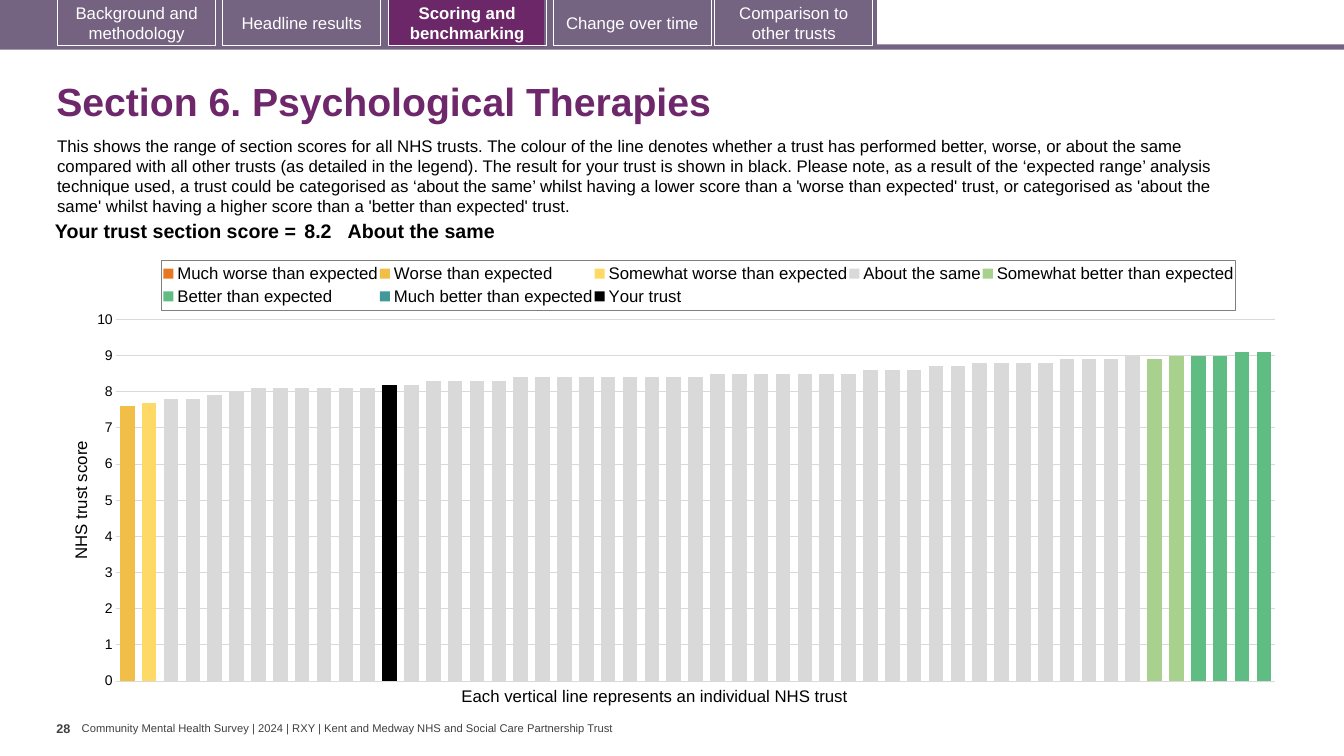
from copy import deepcopy
from lxml.etree import SubElement
from pptx import Presentation
from pptx.chart.data import CategoryChartData
from pptx.dml.color import RGBColor
from pptx.enum.chart import XL_CHART_TYPE as CT, XL_LEGEND_POSITION as LP, XL_TICK_MARK as TM
from pptx.enum.shapes import MSO_SHAPE as SHAPE
from pptx.enum.text import MSO_ANCHOR as ANCHOR, PP_ALIGN as AL
from pptx.oxml import parse_xml
from pptx.oxml.ns import nsdecls, qn
from pptx.util import Cm, Pt

COLORS = {"black": "000000", "white": "FFFFFF", "grey": "404040", "band": "756382",
          "tab": "746280", "active": "6B2768", "title": "6D276A", "grid": "D9D9D9",
          "border": "7F7F7F"}
TABS = [("Background and methodology", 1.45, "tab"), ("Headline results", 5.61, None),
        ("Scoring and benchmarking", 9.78, None), ("Change over time", 13.94, "band"),
        ("Comparison to other trusts", 18.01, "band")]
TRUSTS = 53
SAME_RUNS = [(7.8, 2), (7.9, 1), (8, 1), (8.1, 6), (8.2, 2), (8.3, 4), (8.4, 9),
             (8.5, 7), (8.6, 3), (8.7, 2), (8.8, 4), (8.9, 3), (9, 1)]
SAME = [score for score, count in SAME_RUNS for _ in range(count)]
SERIES = [("Much worse than expected", "E87722", 0, []),
          ("Worse than expected", "F1BE48", 0, [7.6]),
          ("Somewhat worse than expected", "FFD966", 1, [7.7]),
          ("About the same", "D9D9D9", 2, SAME),
          ("Somewhat better than expected", "A9D18E", 47, [8.9, 9]),
          ("Better than expected", "5FBD83", 49, [9, 9, 9.1, 9.1]),
          ("Much better than expected", "419999", 0, []),
          ("Your trust", "000000", 12, [8.2])]
SCORE_CELLS = [("Your trust section score =", 6.68, AL.RIGHT, 0.1),
               ("8.2", 1.19, AL.LEFT, 0.1), ("About the same", 21.82, AL.LEFT, 0)]
INTRO = ("This shows the range of section scores for all NHS trusts. The colour of the line "
         "denotes whether a trust has performed better, worse, or about the same compared with "
         "all other trusts (as detailed in the legend). The result for your trust is shown in "
         "black. Please note, as a result of the ‘expected range’ analysis technique used, a "
         "trust could be categorised as ‘about the same’ whilst having a lower score than a "
         "'worse than expected' trust, or categorised as 'about the same' whilst having a higher "
         "score than a 'better than expected' trust.")


def rgb(name):
    return RGBColor.from_string(COLORS.get(name, name))


def manual_layout(x, y, w, h, inner=False):
    target = '<c:layoutTarget val="inner"/>' if inner else ""
    return parse_xml(
        f'<c:layout {nsdecls("c")}><c:manualLayout>{target}<c:xMode val="edge"/>'
        f'<c:yMode val="edge"/><c:x val="{x}"/><c:y val="{y}"/><c:w val="{w}"/>'
        f'<c:h val="{h}"/></c:manualLayout></c:layout>')


class SlideBuilder:
    """Draws styled elements on one slide, with lengths in centimetres."""

    def __init__(self, prs, font="Arial"):
        self.s = prs.slides.add_slide(prs.slide_layouts[6])
        self.font = font

    def style(self, font, size, color="black", bold=False):
        font.name, font.size, font.bold = self.font, Pt(size), bold
        font.color.rgb = rgb(color)

    def add_text(self, tf, text, size, color="black", bold=False, align=AL.LEFT):
        p = tf.paragraphs[0]
        p.alignment = align
        r = p.add_run()
        r.text = text
        self.style(r.font, size, color, bold)
        return p

    def text(self, box, text, size, color="black", bold=False, wrap=True,
             anchor=ANCHOR.TOP, inset=(0.25, 0.13)):
        tf = self.s.shapes.add_textbox(*map(Cm, box)).text_frame
        tf.word_wrap, tf.vertical_anchor = wrap, anchor
        tf.margin_left = tf.margin_right = Cm(inset[0])
        tf.margin_top = tf.margin_bottom = Cm(inset[1])
        return self.add_text(tf, text, size, color, bold)

    def rect(self, box, fill=None, line=None):
        sp = self.s.shapes.add_shape(SHAPE.RECTANGLE, *map(Cm, box))
        sp.shadow.inherit = False
        if fill:
            sp.fill.solid()
            sp.fill.fore_color.rgb = rgb(fill)
        else:
            sp.fill.background()
        if line:
            sp.line.color.rgb = rgb(line)
            sp.line.width = Pt(0.75)
        else:
            sp.line.fill.background()
        return sp

    def tab(self, label, left, fill, active):
        sp = self.rect((left, -0.03, 3.99, 1.19), fill, "white")
        sp.text_frame.word_wrap = True
        sp.text_frame.vertical_anchor = ANCHOR.MIDDLE
        self.add_text(sp.text_frame, label, 12, "white", active, AL.CENTER)

    def table(self, box, cells):
        table = self.s.shapes.add_table(1, len(cells), *map(Cm, box)).table
        table.first_row = table.horz_banding = False
        for i, (text, width, align, inset) in enumerate(cells):
            table.columns[i].width = Cm(width)
            cell = table.cell(0, i)
            cell.fill.background()
            cell.margin_left = cell.margin_right = Cm(inset)
            cell.margin_top = cell.margin_bottom = Cm(0.1)
            self.add_text(cell.text_frame, text, 14, bold=True, align=align)

    def chart(self, box, series):
        data = CategoryChartData()
        data.categories = [str(n + 1) for n in range(TRUSTS)]
        for name, _, start, scores in series:
            tail = TRUSTS - start - len(scores)
            data.add_series(name, [None] * start + scores + [None] * tail)
        chart = self.s.shapes.add_chart(CT.COLUMN_CLUSTERED, *map(Cm, box), data).chart
        chart.has_title = False
        chart.font.name, chart.font.size = "Calibri", Pt(10)
        chart.font.color.rgb = rgb("black")
        plot = chart.plots[0]
        plot.vary_by_categories = False
        plot.gap_width, plot.overlap = 50, 100
        for ser, (_, color, _, _) in zip(plot.series, series):
            ser.format.fill.solid()
            ser.format.fill.fore_color.rgb = rgb(color)
            ser.invert_if_negative = False
        chart.category_axis.visible = False
        axis = chart.value_axis
        axis.minimum_scale, axis.maximum_scale, axis.major_unit = 0, 10, 1
        axis.has_major_gridlines = False
        axis.major_tick_mark = TM.NONE
        axis.format.line.fill.background()
        self.right_axis(chart)
        axis.has_major_gridlines = True
        axis.major_gridlines.format.line.color.rgb = rgb("grid")
        axis.major_gridlines.format.line.width = Pt(0.75)
        self.style(axis.tick_labels.font, 10)
        self.add_text(axis.axis_title.text_frame, "NHS trust score", 12, align=AL.CENTER)
        self.legend(chart)

    def right_axis(self, chart):
        area = chart.value_axis._element.getparent()
        for old in area.findall(qn("c:layout")):
            area.remove(old)
        area.insert(0, manual_layout(0.04, 0.158, 0.946, 0.808, inner=True))
        left = area.find(qn("c:barChart"))
        right = deepcopy(left)
        left.remove(left.findall(qn("c:ser"))[-1])
        for ser in right.findall(qn("c:ser"))[:-1]:
            right.remove(ser)
        left.addnext(right)
        cat, val = (deepcopy(area.find(qn(tag))) for tag in ("c:catAx", "c:valAx"))
        area.find(qn("c:valAx")).addnext(val)
        val.addnext(cat)
        for node, ids in ((cat, (501, 502)), (val, (502, 501))):
            for tag, number in zip(("c:axId", "c:crossAx"), ids):
                node.find(qn(tag)).set("val", str(number))
        for node, number in zip(right.findall(qn("c:axId")), (501, 502)):
            node.set("val", str(number))
        for tag, value in (("c:axPos", "r"), ("c:crosses", "max"),
                           ("c:majorTickMark", "out"), ("c:tickLblPos", "none")):
            for node in val.findall(qn(tag)):
                node.set("val", value)

    def legend(self, chart):
        chart.has_legend = True
        legend = chart.legend
        legend.position, legend.include_in_layout = LP.TOP, False
        self.style(legend.font, 12)
        node = legend._element
        for old in node.findall(qn("c:layout")):
            node.remove(old)
        node.find(qn("c:legendPos")).addnext(manual_layout(0.077, 0.025, 0.877, 0.112))
        props = parse_xml(f'<c:spPr {nsdecls("c", "a")}/>')
        fill = SubElement(SubElement(props, qn("a:ln"), w=str(Pt(0.75))), qn("a:solidFill"))
        SubElement(fill, qn("a:srgbClr"), val=COLORS["border"])
        node.find(qn("c:txPr")).addprevious(props)


def main():
    prs = Presentation()
    prs.slide_width, prs.slide_height = Cm(33.87), Cm(19.05)
    b = SlideBuilder(prs)
    b.text((2.06, 18.19, 13.56, 0.33),
           "Community Mental Health Survey | 2024 | RXY | "
           "Kent and Medway NHS and Social Care Partnership Trust",
           8, "grey", wrap=False, anchor=ANCHOR.MIDDLE, inset=(0, 0))
    b.rect((0, 1.12, 33.87, 0.13), "band")
    b.rect((0, 0, 22.1, 1.19), "band")
    b.rect((9.8, 0, 3.91, 1.17), "active")
    for label, left, fill in TABS:
        b.tab(label, left, fill, label.startswith("Scoring"))
    title = b.text((1.17, 1.7, 31.72, 1.83), "Section 6. Psychological Therapies",
                   28, "title", True, anchor=ANCHOR.MIDDLE)
    title.line_spacing = 0.9
    b.text((1.42, 18.03, 0.64, 1.02), "28", 9, "grey", True, wrap=False, inset=(0, 0.13))
    b.text((1.19, 3.28, 30.81, 2.31), INTRO, 12)
    b.text((11.38, 17.15, 10.44, 0.76),
           "Each vertical line represents an individual NHS trust", 12, wrap=False)
    b.chart((1.7, 6.27, 30.86, 11.28), SERIES)
    b.table((0.89, 5.46, 29.69, 0.56), SCORE_CELLS)
    prs.save("out.pptx")


if __name__ == "__main__":
    main()
